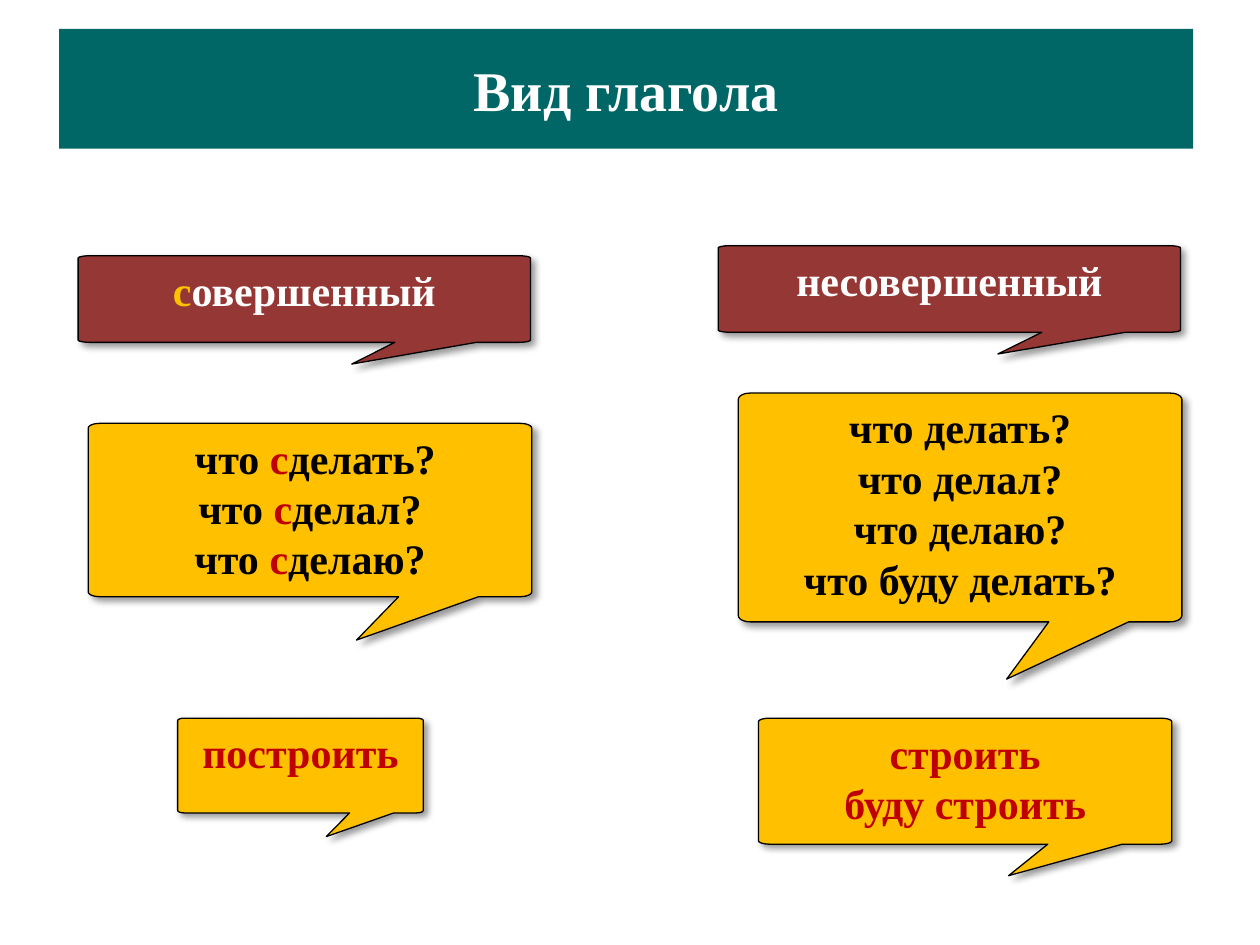
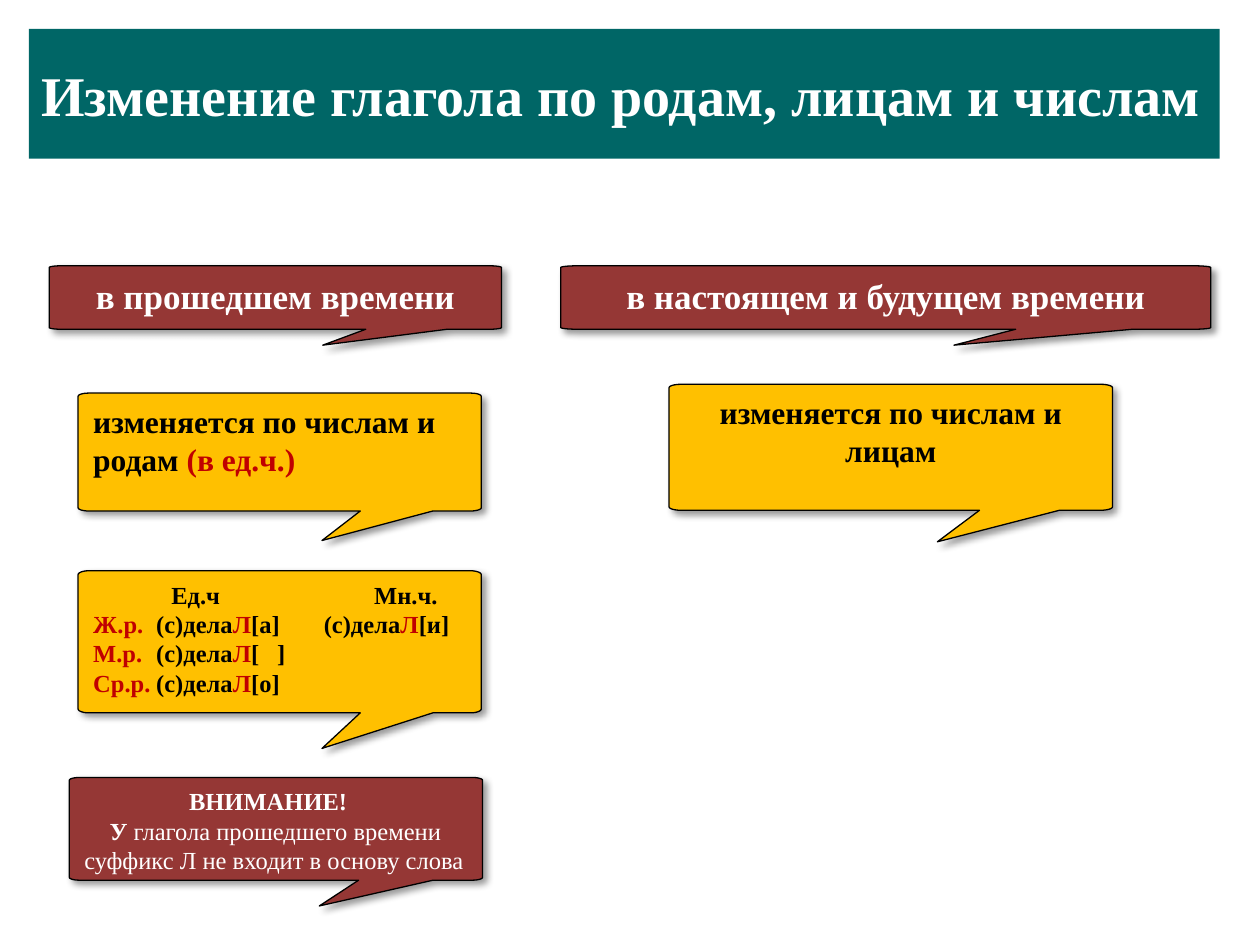
import math

from lxml import etree
from pptx import Presentation
from pptx import util as u
from pptx.dml.color import RGBColor
from pptx.enum import shapes, text
from pptx.oxml import ns

COLORS = {
    "teal": "006666", "brown": "953735", "yellow": "FFC000",
    "red": "C00000", "white": "FFFFFF", "black": "000000",
}
FONT = "Times New Roman"
LEFT, CENTER = text.PP_ALIGN.LEFT, text.PP_ALIGN.CENTER


def rgb(name):
    return RGBColor.from_string(COLORS[name])


def write(sp, lines, size=24, color="black", accent="red", accent_bold=True,
          align=CENTER, anchor=text.MSO_ANCHOR.TOP, margins=(0.12, 0.07),
          indents=(), tabs=()):
    """Fill a shape with bold lines; text between | marks takes the accent format."""
    tf = sp.text_frame
    tf.word_wrap = True
    tf.vertical_anchor = anchor
    tf.margin_left = tf.margin_right = u.Inches(margins[0])
    tf.margin_top = tf.margin_bottom = u.Inches(margins[1])
    for i, line in enumerate(lines):
        p = tf.paragraphs[0] if i == 0 else tf.add_paragraph()
        p.alignment = align
        pPr = p._p.get_or_add_pPr()
        if indents:
            pPr.set("indent", str(u.Inches(indents[i])))
        if tabs:
            tab_list = etree.SubElement(pPr, ns.qn("a:tabLst"))
            for stop in tabs[i]:
                etree.SubElement(tab_list, ns.qn("a:tab"), pos=str(u.Inches(stop)), algn="l")
        for j, part in enumerate(line.split("|")):
            if not part:
                continue
            marked = j % 2 == 1
            r = p.add_run()
            r.text = part
            r.font.name = FONT
            r.font.size = u.Pt(size)
            r.font.bold = accent_bold if marked else True
            r.font.color.rgb = rgb(accent if marked else color)


def callout_outline(x, y, w, h):
    """Points of a rounded box, 80% of the height, with a tail below it."""
    body, rx, ry = 0.8 * h, 0.027 * w, 0.022 * h
    steps = 6

    def corner(cx, cy, start):
        angles = [math.radians(start + 90 * k / steps) for k in range(steps + 1)]
        return [(cx + rx * math.cos(a), cy + ry * math.sin(a)) for a in angles]

    tail = [(x + 0.88 * w, y + body), (x + 0.605 * w, y + h), (x + 0.7 * w, y + body)]
    return (corner(x + w - rx, y + ry, 270) + corner(x + w - rx, y + body - ry, 0)
            + tail
            + corner(x + rx, y + body - ry, 90) + corner(x + rx, y + ry, 180))


class Deck:
    def __init__(self):
        self.prs = Presentation()
        self.prs.slide_width, self.prs.slide_height = u.Inches(10), u.Inches(7.5)

    def slide(self):
        self.s = self.prs.slides.add_slide(self.prs.slide_layouts[6])

    def title(self, x, y, w, h, line, align=CENTER):
        sp = self.s.shapes.add_shape(shapes.MSO_SHAPE.RECTANGLE,
                                     *(u.Inches(v) for v in (x, y, w, h)))
        sp.shadow.inherit = False
        sp.fill.solid()
        sp.fill.fore_color.rgb = rgb("teal")
        sp.line.fill.background()
        write(sp, [line], size=32, color="white", align=align,
              anchor=text.MSO_ANCHOR.MIDDLE, margins=(0.1, 0.05))

    def callout(self, x, y, w, h, fill, lines, **fmt):
        points = [(u.Inches(px), u.Inches(py)) for px, py in callout_outline(x, y, w, h)]
        builder = self.s.shapes.build_freeform(*points[0])
        builder.add_line_segments(points[1:], close=True)
        sp = builder.convert_to_shape()
        sp.fill.solid()
        sp.fill.fore_color.rgb = rgb(fill)
        sp.line.color.rgb = rgb("black")
        sp.line.width = u.Pt(0.75)
        self.drop_shadow(sp)
        write(sp, lines, **fmt)

    def drop_shadow(self, sp):
        sp.shadow.inherit = False
        effects = sp._element.spPr.find(ns.qn("a:effectLst"))
        shadow = etree.SubElement(effects, ns.qn("a:outerShdw"), blurRad=str(u.Pt(4)),
                                  dist=str(u.Pt(3)), dir=str(45 * 60000),
                                  algn="tl", rotWithShape="0")
        color = etree.SubElement(shadow, ns.qn("a:srgbClr"), val=COLORS["black"])
        etree.SubElement(color, ns.qn("a:alpha"), val="40000")

    def heading(self, x, y, w, h, lines, **fmt):
        self.callout(x, y, w, h, "brown", lines, color="white", **fmt)

    def note(self, x, y, w, h, lines, **fmt):
        self.callout(x, y, w, h, "yellow", lines, **fmt)


def aspect_slide(deck):
    deck.slide()
    deck.title(0.47, 0.23, 9, 0.95, "Вид глагола")
    deck.heading(0.62, 2.03, 3.59, 0.86, ["|с|овершенный"], accent="yellow")
    deck.heading(5.7, 1.95, 3.67, 0.86, ["несовершенный"])
    deck.note(0.7, 3.36, 3.52, 1.72,
              [" что |с|делать?", "что |с|делал?", "что |с|делаю?"])
    deck.note(5.86, 3.12, 3.52, 2.27,
              ["что делать?", "что делал?", "что делаю?", "что буду делать?"])
    deck.note(1.41, 5.7, 1.95, 0.94, ["построить"], color="red")
    deck.note(6.02, 5.7, 3.28, 1.25, ["строить", "буду строить"], color="red")


def inflection_slide(deck):
    deck.slide()
    deck.title(0.23, 0.23, 9.45, 1.03, "Изменение глагола по родам, лицам и числам", align=LEFT)
    deck.heading(0.39, 2.11, 3.59, 0.63, ["в прошедшем времени"], size=20)
    deck.note(0.62, 3.12, 3.2, 1.17, ["изменяется по числам и родам |(в ед.ч.)|"],
              size=18, align=LEFT)
    deck.note(0.62, 4.53, 3.2, 1.41,
              ["\tЕд.ч\tМн.ч.",
               "|Ж.р.|\t(с)дела|Л|[а]\t(с)дела|Л|[и]",
               "|М.р.|\t(с)дела|Л|[\t]",
               "|Ср.р.|\t(с)дела|Л|[о]"],
              size=14, align=LEFT,
              tabs=[(0.62, 2.23), (0.5, 1.83), (0.5, 1.46), (0.5,)])
    deck.heading(0.55, 6.17, 3.28, 1.02,
                 ["ВНИМАНИЕ!",
                  "У| глагола прошедшего времени суффикс Л не входит в основу слова|"],
                 size=14, accent="white", accent_bold=False, align=LEFT,
                 indents=(0.83, 0.2))
    deck.heading(4.45, 2.11, 5.16, 0.63, ["в настоящем и будущем времени"], size=20)
    deck.note(5.31, 3.05, 3.52, 1.25, ["изменяется по числам и лицам"], size=18)


def main():
    deck = Deck()
    aspect_slide(deck)
    inflection_slide(deck)
    deck.prs.save("out.pptx")


if __name__ == "__main__":
    main()
